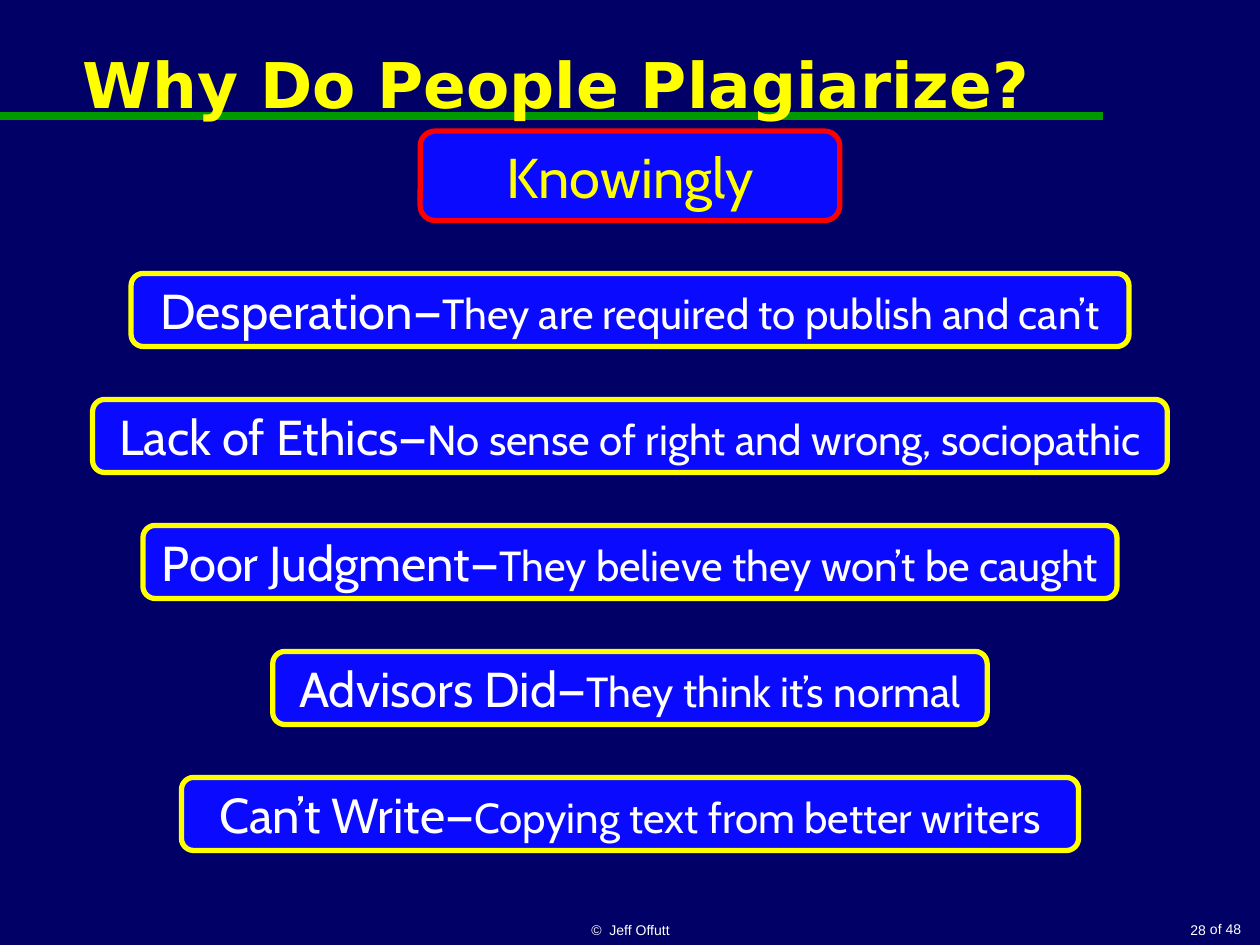
import pptx
import pptx.dml.color
import pptx.enum.shapes
import pptx.enum.text
import pptx.oxml.ns
import pptx.util
from lxml import etree

Inches = pptx.util.Inches
Pt = pptx.util.Pt
RGBColor = pptx.dml.color.RGBColor
ALIGN = pptx.enum.text.PP_ALIGN
ANCHOR = pptx.enum.text.MSO_ANCHOR

NAVY = RGBColor(0x00, 0x00, 0x66)
GREEN = RGBColor(0x00, 0x99, 0x00)
BLUE = RGBColor(0x0A, 0x0A, 0xFF)
RED = RGBColor(0xFF, 0x00, 0x00)
YELLOW = RGBColor(0xFF, 0xFF, 0x00)
WHITE = RGBColor(0xFF, 0xFF, 0xFF)

SLIDE_WIDTH = 10
REASON_TOP = 2.17
REASON_STEP = 1
REASON_HEIGHT = 0.58
REASONS = [
    ("Desperation—", "They are required to publish and can’t", 7.92),
    ("Lack of Ethics—", "No sense of right and wrong, sociopathic", 8.53),
    ("Poor Judgment—", "They believe they won’t be caught", 7.73),
    ("Advisors Did—", "They think it’s normal", 5.67),
    ("Can’t Write—", "Copying text from better writers", 7.12),
]


def style_run(run, font, size, color, bold=False):
    run.font.name = font
    run.font.size = Pt(size)
    run.font.color.rgb = color
    run.font.bold = bold


def add_label(slide, box, text, font, size, color, align, anchor, bold=False, wrap=True):
    label = slide.shapes.add_textbox(*map(Inches, box))
    frame = label.text_frame
    frame.word_wrap = wrap
    frame.vertical_anchor = anchor
    frame.text = text
    paragraph = frame.paragraphs[0]
    paragraph.alignment = align
    style_run(paragraph.runs[0], font, size, color, bold)


def add_header(slide, left, top, width, height):
    rule_y = Inches(top + 0.92)
    rule = slide.shapes.add_connector(
        pptx.enum.shapes.MSO_CONNECTOR.STRAIGHT,
        Inches(left), rule_y, Inches(left + width), rule_y)
    rule.line.color.rgb = GREEN
    rule.line.width = Pt(4.5)
    etree.SubElement(rule._element.spPr, pptx.oxml.ns.qn("a:effectLst"))
    add_label(slide, (left + 0.08, top, width - 0.08, height), "Why Do People Plagiarize?",
              "DejaVu Sans", 36, YELLOW, ALIGN.CENTER, ANCHOR.MIDDLE, bold=True)


def add_panel(slide, top, width, height, border, parts):
    left = (SLIDE_WIDTH - width) / 2
    panel = slide.shapes.add_shape(
        pptx.enum.shapes.MSO_SHAPE.ROUNDED_RECTANGLE,
        Inches(left), Inches(top), Inches(width), Inches(height))
    panel.shadow.inherit = False
    panel.fill.solid()
    panel.fill.fore_color.rgb = BLUE
    panel.line.color.rgb = border
    panel.line.width = Pt(3)
    frame = panel.text_frame
    frame.word_wrap = True
    frame.vertical_anchor = ANCHOR.MIDDLE
    paragraph = frame.paragraphs[0]
    paragraph.alignment = ALIGN.CENTER
    for text, size, color in parts:
        run = paragraph.add_run()
        run.text = text
        style_run(run, "Cabin", size, color)


def add_reasons(slide, top, step, height):
    for index, (reason, detail, width) in enumerate(REASONS):
        add_panel(slide, top + index * step, width, height, YELLOW,
                  [(reason, 28, WHITE), (detail, 24, WHITE)])


def add_footer(slide, top, height):
    add_label(slide, (3.42, top, 3.17, height), "©  Jeff Offutt",
              "Arial", 8, WHITE, ALIGN.CENTER, ANCHOR.BOTTOM)
    add_label(slide, (7.92, top, 1.75, height), "28",
              "Arial", 8, WHITE, ALIGN.RIGHT, ANCHOR.BOTTOM)
    add_label(slide, (9.5, top + 0.09, 0.45, height - 0.09), "of 48",
              "Arial", 8, WHITE, ALIGN.RIGHT, ANCHOR.TOP, wrap=False)


def main():
    presentation = pptx.Presentation()
    presentation.slide_width = Inches(SLIDE_WIDTH)
    presentation.slide_height = Inches(7.5)
    slide = presentation.slides.add_slide(presentation.slide_layouts[6])
    slide.background.fill.solid()
    slide.background.fill.fore_color.rgb = NAVY
    add_header(slide, 0, 0, 8.75, 1.33)
    add_panel(slide, 1.04, 3.33, 0.71, RED, [("Knowingly", 32, YELLOW)])
    add_reasons(slide, REASON_TOP, REASON_STEP, REASON_HEIGHT)
    add_footer(slide, 7.17, 0.33)
    presentation.save("out.pptx")


if __name__ == "__main__":
    main()
